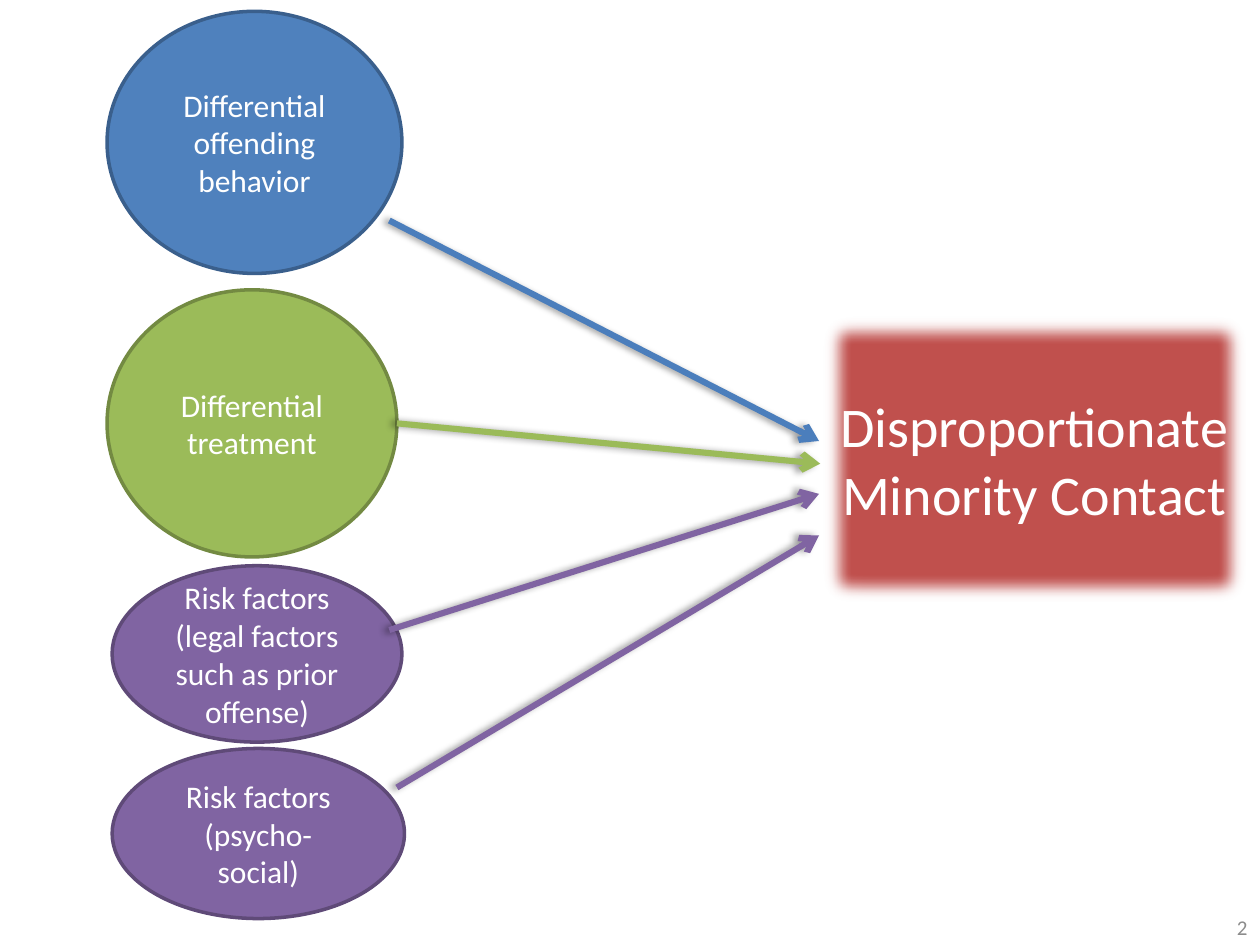
from lxml.etree import SubElement
from pptx import Presentation
from pptx.dml.color import RGBColor
from pptx.enum.shapes import MSO_CONNECTOR, MSO_SHAPE
from pptx.enum.text import MSO_ANCHOR, PP_ALIGN
from pptx.oxml import parse_xml
from pptx.oxml.ns import nsdecls, qn
from pptx.util import Inches, Pt

THEME = {
    "font": "Calibri",
    "white": "FFFFFF",
    "gray": "8C8C8C",
    "blue": ("4F81BD", "3A5F8C", "4B7EBC"),
    "green": ("9BBB59", "738A42", "9BBB59"),
    "purple": ("8064A2", "5F4A78", "8064A2"),
    "red": ("C0504D", "8E3B39"),
    "factor_size": 18,
    "outcome_size": 32,
    "number_size": 12,
    "outline": 2,
    "arrow": 3.5,
}

presentation = Presentation()
presentation.slide_width = Inches(10)
presentation.slide_height = Inches(7.5)
column = presentation.slide_width / 100
row = presentation.slide_height / 75
slide = presentation.slides.add_slide(presentation.slide_layouts[6])


def grid(*lengths):
    return [round(length * unit) for length, unit in zip(lengths, (column, row) * 2)]


def write(shape, text, size, color, alignment=PP_ALIGN.CENTER):
    text_frame = shape.text_frame
    text_frame.word_wrap = True
    text_frame.vertical_anchor = MSO_ANCHOR.MIDDLE
    text_frame.text = text
    paragraph = text_frame.paragraphs[0]
    paragraph.alignment = alignment
    font = paragraph.runs[0].font
    font.name = THEME["font"]
    font.size = Pt(size)
    font.color.rgb = RGBColor.from_string(color)


ellipse, rectangle = MSO_SHAPE.OVAL, MSO_SHAPE.RECTANGLE
factor_size, outcome_size = THEME["factor_size"], THEME["outcome_size"]
boxes = [
    (ellipse, "Differential offending behavior", "blue", factor_size, (8.5, 0.9, 23.4, 20.8)),
    (ellipse, "Differential treatment", "green", factor_size, (8.5, 23, 23, 21.2)),
    (ellipse, "Risk factors (legal factors such as prior offense)", "purple", factor_size,
     (8.9, 44.9, 23, 14)),
    (ellipse, "Risk factors (psycho-social)", "purple", factor_size, (8.9, 59.4, 23.2, 13.5)),
    (rectangle, "Disproportionate Minority Contact", "red", outcome_size, (65, 24.8, 34.2, 23.3)),
]
for kind, text, color, size, place in boxes:
    shape = slide.shapes.add_shape(kind, *grid(*place))
    shape.shadow.inherit = False
    shape.fill.solid()
    shape.fill.fore_color.rgb = RGBColor.from_string(THEME[color][0])
    shape.line.color.rgb = RGBColor.from_string(THEME[color][1])
    shape.line.width = Pt(THEME["outline"])
    write(shape, text, size, THEME["white"])
    if kind == rectangle:
        effects = shape._element.spPr.find(qn("a:effectLst"))
        SubElement(effects, qn("a:softEdge"), rad=str(Pt(10)))

arrows = [
    ("blue", (30.9, 17.5, 65, 35)),
    ("green", (31.5, 33.6, 65.1, 36.8)),
    ("purple", (30.9, 50, 65, 39.2)),
    ("purple", (31.5, 62.5, 65, 42.5)),
]
for color, ends in arrows:
    connector = slide.shapes.add_connector(MSO_CONNECTOR.STRAIGHT, *grid(*ends))
    connector.line.color.rgb = RGBColor.from_string(THEME[color][2])
    connector.line.width = Pt(THEME["arrow"])
    SubElement(connector.line._get_or_add_ln(), qn("a:tailEnd"), type="arrow")
    connector._element.spPr.append(parse_xml(
        f'<a:effectLst {nsdecls("a")}>'
        f'<a:outerShdw blurRad="{Pt(4)}" dist="{Pt(3)}" dir="10800000" rotWithShape="0">'
        '<a:srgbClr val="000000"><a:alpha val="40000"/></a:srgbClr>'
        '</a:outerShdw></a:effectLst>'
    ))

number = slide.shapes.add_textbox(*grid(76.7, 71.6, 23.3, 4))
write(number, "2", THEME["number_size"], THEME["gray"], PP_ALIGN.RIGHT)

presentation.save("out.pptx")
